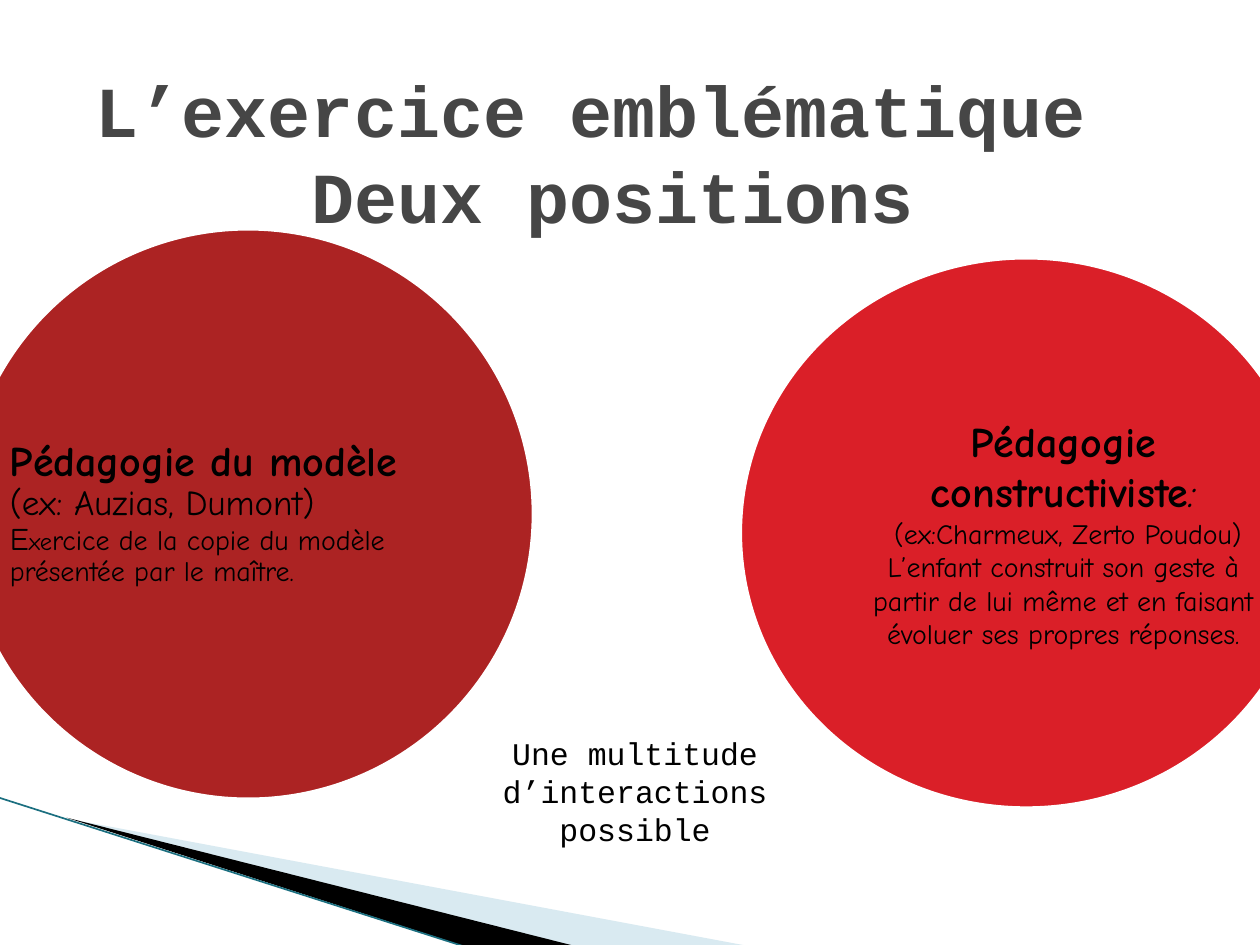
from lxml.etree import SubElement
from pptx import Presentation
from pptx.dml.color import RGBColor
from pptx.enum.shapes import MSO_CONNECTOR, MSO_SHAPE
from pptx.enum.text import MSO_ANCHOR, MSO_AUTO_SIZE, PP_ALIGN
from pptx.oxml.ns import qn
from pptx.util import Inches, Pt

COLORS = {"title": "464646", "text": "000000", "white": "FFFFFF",
          "model": "AC2323", "construct": "DA1F28",
          "pale": "A0CBDC", "dark": "000000", "teal": "1B6F80"}
HAND, MONO = "Comic Neue", "Courier New"


def rgb(name):
    return RGBColor.from_string(COLORS[name])


def add_text(p, text, size, font=HAND, color="text", bold=False, italic=False):
    r = p.add_run()
    r.text = text
    r.font.size = Pt(size)
    r.font.name = font
    r.font.bold = bold
    r.font.italic = italic
    r.font.color.rgb = rgb(color)


prs = Presentation()
prs.slide_width, prs.slide_height = Inches(10), Inches(7.5)
s = prs.slides.add_slide(prs.slide_layouts[5])

# Corner wedges: pale one is translucent
wedges = [("pale", 40, [(0.55, 6.5), (5.95, 7.51), (4.56, 7.51)]),
          ("dark", 100, [(0.53, 6.49), (4.57, 7.51), (3.72, 7.52)])]
for color, alpha, points in wedges:
    points = [(Inches(x), Inches(y)) for x, y in points]
    fb = s.shapes.build_freeform(*points[0])
    fb.add_line_segments(points[1:], close=True)
    sp = fb.convert_to_shape()
    sp.shadow.inherit = False
    sp.fill.solid()
    sp.fill.fore_color.rgb = rgb(color)
    sp.line.fill.background()
    if alpha < 100:
        clr = sp._element.spPr.find(".//" + qn("a:srgbClr"))
        SubElement(clr, qn("a:alpha"), val=str(alpha * 1000))

# Corner line
line = s.shapes.add_connector(MSO_CONNECTOR.STRAIGHT, Inches(-0.01), Inches(6.33),
                              Inches(3.71), Inches(7.52))
line.line.color.rgb = rgb("teal")
line.line.width = Pt(0.95)
SubElement(line._element.spPr, qn("a:effectLst"))

# Title
title = s.shapes.title
title.left, title.top = Inches(0.23), Inches(0.3)
title.width, title.height = Inches(9.27), Inches(1.81)
tf = title.text_frame
tf.auto_size = MSO_AUTO_SIZE.NONE
tf.vertical_anchor = MSO_ANCHOR.MIDDLE
p = tf.paragraphs[0]
p.alignment = PP_ALIGN.CENTER
add_text(p, "L’exercice emblématique ", 41, font=MONO, color="title", bold=True)
p.add_line_break()
add_text(p, "Deux positions", 41, font=MONO, color="title", bold=True)

# Two circles: box, side margins, alignment, line spacing, paragraphs of runs
circles = [
    ("construct", (5.86, 2.03, 4.57, 4.4), (0.31, -0.28), PP_ALIGN.CENTER, 1.0, [
        [("Pédagogie constructiviste", 24, {"bold": True}),
         (":", 24, {"italic": True})],
        [(" (ex:Charmeux, Zerto Poudou)", 16, {})],
        [("L’enfant construit son geste à partir de lui même et en faisant "
          "évoluer ses propres réponses.", 16, {})]]),
    ("model", (-0.31, 1.8, 4.56, 4.56), (-0.28, 0.12), PP_ALIGN.LEFT, 0.9, [
        [("Pédagogie du modèle", 24, {"bold": True})],
        [("(ex: Auzias, Dumont)", 20, {})],
        [("E", 18, {}), ("xe", 14, {}),
         ("rcice de la copie du modèle présentée par le maître.", 16, {})]]),
]
for color, box, margins, align, spacing, paragraphs in circles:
    sp = s.shapes.add_shape(MSO_SHAPE.OVAL, *[Inches(v) for v in box])
    sp.shadow.inherit = False
    sp.fill.solid()
    sp.fill.fore_color.rgb = rgb(color)
    sp.line.color.rgb = rgb("white")
    sp.line.width = Pt(4.33)
    tf = sp.text_frame
    tf.word_wrap = True
    tf.vertical_anchor = MSO_ANCHOR.MIDDLE
    tf.margin_left, tf.margin_right = [Inches(m) for m in margins]
    tf.margin_top = tf.margin_bottom = 0
    for i, runs in enumerate(paragraphs):
        p = tf.add_paragraph() if i else tf.paragraphs[0]
        p.alignment = align
        p.line_spacing = spacing
        for text, size, style in runs:
            add_text(p, text, size, **style)

# Caption between the circles
tb = s.shapes.add_textbox(Inches(3.44), Inches(5.78), Inches(3.2), Inches(0.71))
tf = tb.text_frame
tf.word_wrap = True
tf.auto_size = MSO_AUTO_SIZE.SHAPE_TO_FIT_TEXT
p = tf.paragraphs[0]
p.alignment = PP_ALIGN.CENTER
add_text(p, "Une multitude d’interactions possible", 18, font=MONO)

prs.save("out.pptx")
